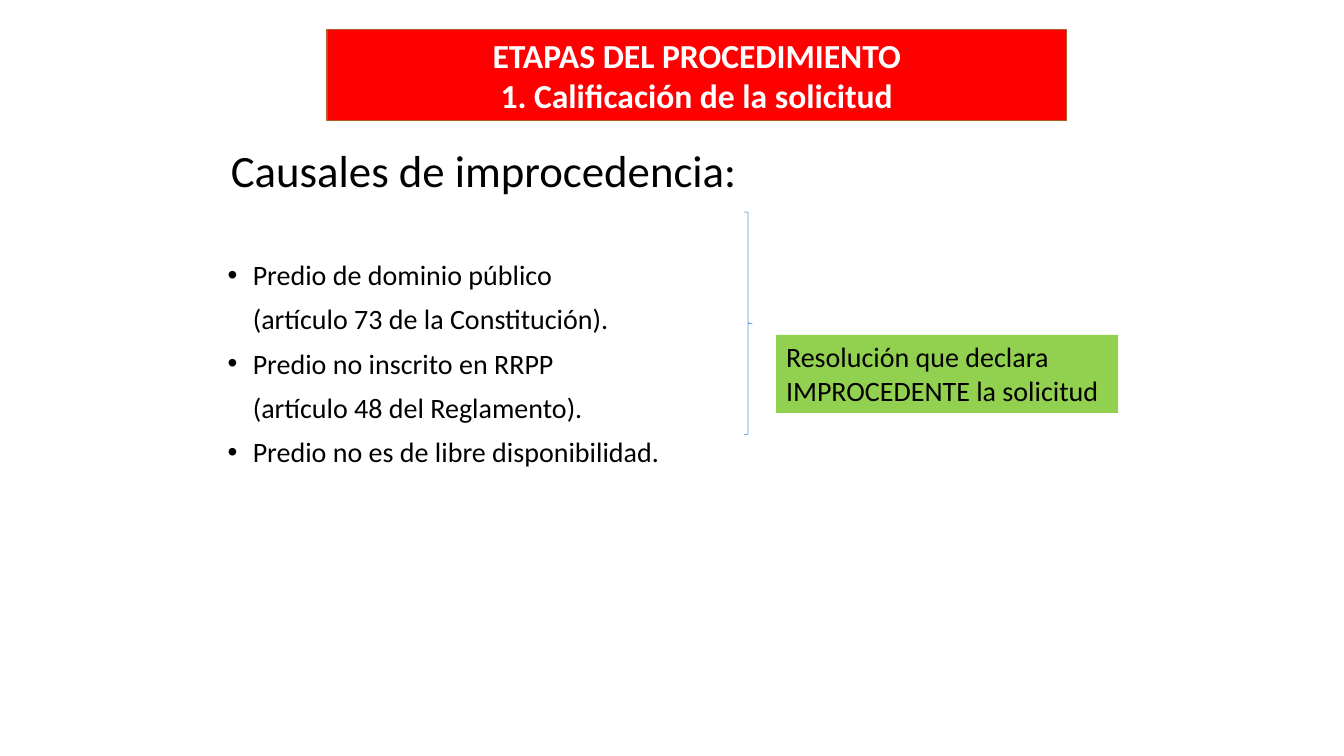
import pptx
import pptx.util
import pptx.dml.color
import pptx.enum.shapes
import pptx.enum.text
import pptx.oxml.ns
from lxml import etree

Pt = pptx.util.Pt
Shape = pptx.enum.shapes.MSO_SHAPE
Align = pptx.enum.text.PP_ALIGN
Anchor = pptx.enum.text.MSO_ANCHOR

COLORS = {
    "black": "000000",
    "white": "FFFFFF",
    "red": "FF0000",
    "brown": "AF5C24",
    "green": "92D050",
    "blue": "5B9BD5",
}

CAUSES = [
    ("Predio de dominio público", True),
    ("(artículo 73 de la Constitución).", False),
    ("Predio no inscrito en RRPP", True),
    ("(artículo 48 del Reglamento).", False),
    ("Predio no es de libre disponibilidad.", True),
]


def rgb(name):
    return pptx.dml.color.RGBColor.from_string(COLORS[name])


class SlideBuilder:
    font_name = "Calibri"

    def __init__(self, slide):
        self.slide = slide

    def set_frame(self, shape, anchor):
        formats = {
            "word_wrap": True,
            "auto_size": pptx.enum.text.MSO_AUTO_SIZE.NONE,
            "vertical_anchor": anchor,
        }
        for name, value in formats.items():
            setattr(shape.text_frame, name, value)
        return shape.text_frame

    def set_para(self, para, text, size, color="black", bold=False, **formats):
        """Fill a paragraph; formats are paragraph attributes."""
        para.text = text
        for name, value in formats.items():
            setattr(para, name, value)
        for span in para.runs:
            font = {"name": self.font_name, "size": Pt(size), "bold": bold}
            for name, value in font.items():
                setattr(span.font, name, value)
            span.font.color.rgb = rgb(color)

    def title(self, text, left, top, width, height):
        box = self.slide.shapes.title
        place = {"left": left, "top": top, "width": width, "height": height}
        for name, value in place.items():
            setattr(box, name, Pt(value))
        frame = self.set_frame(box, Anchor.MIDDLE)
        self.set_para(frame.paragraphs[0], text, 32,
                      alignment=Align.LEFT, line_spacing=0.9)

    def bullets(self, items, left, top, width, height):
        """Add a list of (text, has bullet) items sharing one left margin."""
        box = self.slide.shapes.add_textbox(Pt(left), Pt(top), Pt(width), Pt(height))
        frame = self.set_frame(box, Anchor.TOP)
        for index, (text, has_bullet) in enumerate(items):
            para = frame.add_paragraph() if index else frame.paragraphs[0]
            self.set_para(para, text, 20, line_spacing=0.9,
                          space_before=Pt(10 if index else 0))
            properties = para._p.get_or_add_pPr()
            properties.set("marL", str(Pt(18)))
            properties.set("indent", str(Pt(-18 if has_bullet else 0)))
            if has_bullet:
                qn = pptx.oxml.ns.qn
                etree.SubElement(properties, qn("a:buFont"), typeface="Arial")
                etree.SubElement(properties, qn("a:buChar"), char="•")

    def shape(self, kind, left, top, width, height, fill=None, line=None, weight=1):
        box = self.slide.shapes.add_shape(
            kind, Pt(left), Pt(top), Pt(width), Pt(height))
        box.shadow.inherit = False
        if fill:
            box.fill.solid()
            box.fill.fore_color.rgb = rgb(fill)
        else:
            box.fill.background()
        if line:
            box.line.color.rgb = rgb(line)
            box.line.width = Pt(weight)
        else:
            box.line.fill.background()
        return box

    def label(self, box, lines, size, anchor, **formats):
        frame = self.set_frame(box, anchor)
        for index, text in enumerate(lines):
            para = frame.add_paragraph() if index else frame.paragraphs[0]
            self.set_para(para, text, size, **formats)


def main():
    deck = pptx.Presentation()
    deck.slide_width, deck.slide_height = Pt(960), Pt(540)
    builder = SlideBuilder(deck.slides.add_slide(deck.slide_layouts[5]))

    builder.title("Causales de improcedencia:", 157.7, 78.5, 648, 90)
    builder.bullets(CAUSES, 155.5, 183.2, 648, 200.6)

    resolution = builder.shape(Shape.RECTANGLE, 554.4, 239.2, 244.4, 55.7, "green")
    builder.label(resolution, ["Resolución que declara", "IMPROCEDENTE la solicitud"],
                  20, Anchor.TOP, alignment=Align.LEFT)

    builder.shape(Shape.RIGHT_BRACE, 531.4, 151.4, 5.8, 159.1,
                  line="blue", weight=0.5)

    banner = builder.shape(Shape.RECTANGLE, 233.5, 21, 528.5, 65, "red", "brown")
    builder.label(banner, ["ETAPAS DEL PROCEDIMIENTO\n1. Calificación de la solicitud"],
                  24, Anchor.MIDDLE, color="white", bold=True, alignment=Align.CENTER)

    deck.save("out.pptx")


if __name__ == "__main__":
    main()
